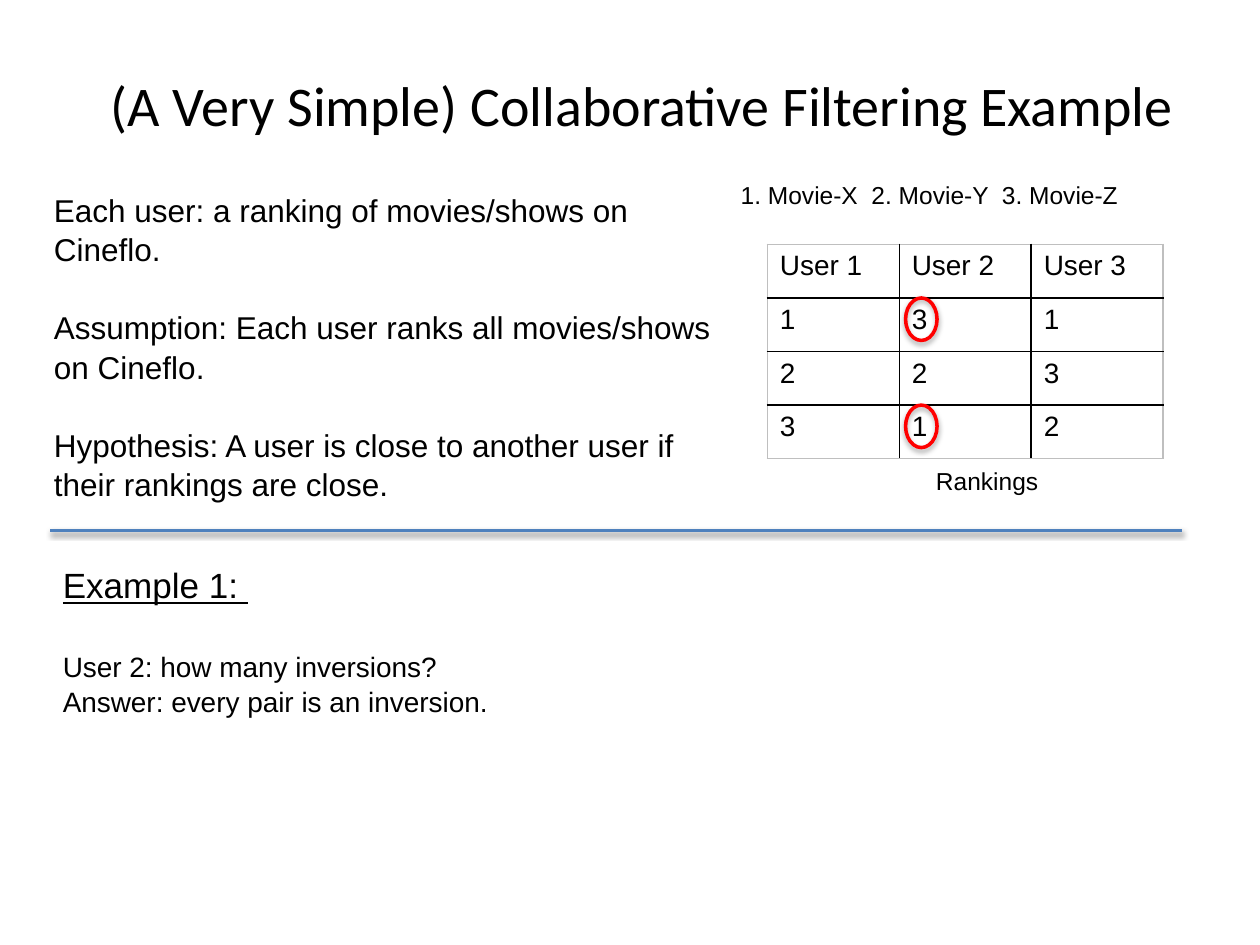
from dataclasses import dataclass

from lxml import etree
from pptx import Presentation
from pptx import util as u
from pptx.dml import color
from pptx.enum import shapes, text
from pptx.oxml import ns

WIDE, HIGH = 10, 7.5
HUES = {"ink": "000000", "rule": "4F81BD", "ring": "FF0000", "edge": "BFBFBF"}
LEAD = 1.05


@dataclass
class Para:
    words: str
    size: float
    gap: float = 0
    under: bool = False


@dataclass
class Box:
    left: float
    top: float
    width: float
    height: float
    paras: list[Para]


@dataclass
class Grid:
    left: float
    top: float
    col: float
    row: float
    cells: list[list[str]]


def hue(name: str) -> color.RGBColor:
    return color.RGBColor.from_string(HUES[name])


def across(share: float) -> int:
    return u.Inches(WIDE * share)


def down(share: float) -> int:
    return u.Inches(HIGH * share)


def write(para, words: str, size: float, face: str = "Arial", under: bool = False) -> None:
    run = para.add_run()
    run.text = words
    run.font.size = u.Pt(size)
    run.font.name = face
    run.font.bold = False
    run.font.underline = under
    run.font.color.rgb = hue("ink")


def shade(shape, alpha: int, dist: float) -> None:
    props = shape._element.spPr
    effects = etree.SubElement(props, ns.qn("a:effectLst"))
    outer = etree.SubElement(effects, ns.qn("a:outerShdw"), blurRad=str(u.Pt(3.1)),
                             dist=str(u.Pt(dist)), dir="5400000", rotWithShape="0")
    tint = etree.SubElement(outer, ns.qn("a:srgbClr"), val=HUES["ink"])
    etree.SubElement(tint, ns.qn("a:alpha"), val=str(alpha * 1000))


def draw_box(slide, box: Box) -> None:
    shape = slide.shapes.add_textbox(across(box.left), down(box.top),
                                     across(box.width), down(box.height))
    frame = shape.text_frame
    frame.word_wrap = True
    for i, item in enumerate(box.paras):
        para = frame.add_paragraph() if i else frame.paragraphs[0]
        para.line_spacing = LEAD
        para.space_before = u.Pt(item.gap)
        write(para, item.words, item.size, under=item.under)


def edge(cell, side: str, name: str) -> None:
    props = cell._tc.get_or_add_tcPr()
    line = etree.SubElement(props, ns.qn(f"a:ln{side}"), w=str(u.Pt(1)))
    fill = etree.SubElement(line, ns.qn("a:solidFill"))
    etree.SubElement(fill, ns.qn("a:srgbClr"), val=HUES[name])


def draw_grid(slide, grid: Grid) -> None:
    rows, cols = len(grid.cells), len(grid.cells[0])
    table = slide.shapes.add_table(rows, cols, across(grid.left), down(grid.top),
                                   across(grid.col * cols), down(grid.row * rows)).table
    table.first_row = table.horz_banding = False
    for col in table.columns:
        col.width = across(grid.col)
    for r, line in enumerate(grid.cells):
        table.rows[r].height = down(grid.row)
        for c, words in enumerate(line):
            cell = table.cell(r, c)
            outer = {"L": c == 0, "R": c == cols - 1, "T": r == 0, "B": r == rows - 1}
            for side, rim in outer.items():
                edge(cell, side, "edge" if rim else "ink")
            cell.fill.background()
            write(cell.text_frame.paragraphs[0], words, 16)


def draw_ring(slide, grid: Grid, row: int, col: int) -> None:
    ring = slide.shapes.add_shape(shapes.MSO_SHAPE.OVAL,
                                  across(grid.left + grid.col * col + 0.005),
                                  down(grid.top + grid.row * row),
                                  across(0.025), down(0.045))
    ring.fill.background()
    ring.line.color.rgb = hue("ring")
    ring.line.width = u.Pt(2)
    shade(ring, 35, 1.8)


def draw_rule(slide, left: float, right: float, top: float) -> None:
    rule = slide.shapes.add_connector(shapes.MSO_CONNECTOR.STRAIGHT, across(left),
                                      down(top), across(right), down(top))
    rule.line.color.rgb = hue("rule")
    rule.line.width = u.Pt(2)
    shade(rule, 38, 1.6)


def draw_title(slide, words: str) -> None:
    title = slide.shapes.title
    title.left, title.top = across(0.06), u.Inches(0.2)
    title.width, title.height = across(0.9), u.Inches(1.25)
    title.text_frame.vertical_anchor = text.MSO_ANCHOR.MIDDLE
    para = title.text_frame.paragraphs[0]
    para.alignment = text.PP_ALIGN.CENTER
    write(para, words, 32, "Calibri")


BOXES = [
    Box(0.033, 1.45 / HIGH, 0.555, 2.52 / HIGH, [
        Para("Each user: a ranking of movies/shows on Cineflo.", 18),
        Para("Assumption: Each user ranks all movies/shows on Cineflo.", 18, 21.7),
        Para("Hypothesis: A user is close to another user if their rankings are close.",
             18, 21.7),
    ]),
    Box(0.733, 3.64 / HIGH, 0.227, 0.34 / HIGH, [Para("Rankings", 14)]),
    Box(0.04, 4.41 / HIGH, 0.883, 1.58 / HIGH, [
        Para("Example 1: ", 20, under=True),
        Para("User 2: how many inversions?", 16, 24),
        Para("Answer: every pair is an inversion.", 16),
    ]),
    Box(0.578, 1.37 / HIGH, 0.389, 0.34 / HIGH,
        [Para("1. Movie-X  2. Movie-Y  3. Movie-Z", 14)]),
]
RANKS = Grid(0.609, 1.94 / HIGH, 0.1047, 0.425 / HIGH, [
    ["User 1", "User 2", "User 3"],
    ["1", "3", "1"],
    ["2", "2", "3"],
    ["3", "1", "2"],
])


def main() -> None:
    deck = Presentation()
    deck.slide_width, deck.slide_height = u.Inches(WIDE), u.Inches(HIGH)
    slide = deck.slides.add_slide(deck.slide_layouts[5])
    draw_title(slide, "(A Very Simple) Collaborative Filtering Example")
    for box in BOXES:
        draw_box(slide, box)
    draw_rule(slide, 0.04, 0.938, 4.21 / HIGH)
    draw_grid(slide, RANKS)
    for row in (1, 3):
        draw_ring(slide, RANKS, row, 1)
    deck.save("out.pptx")


if __name__ == "__main__":
    main()
